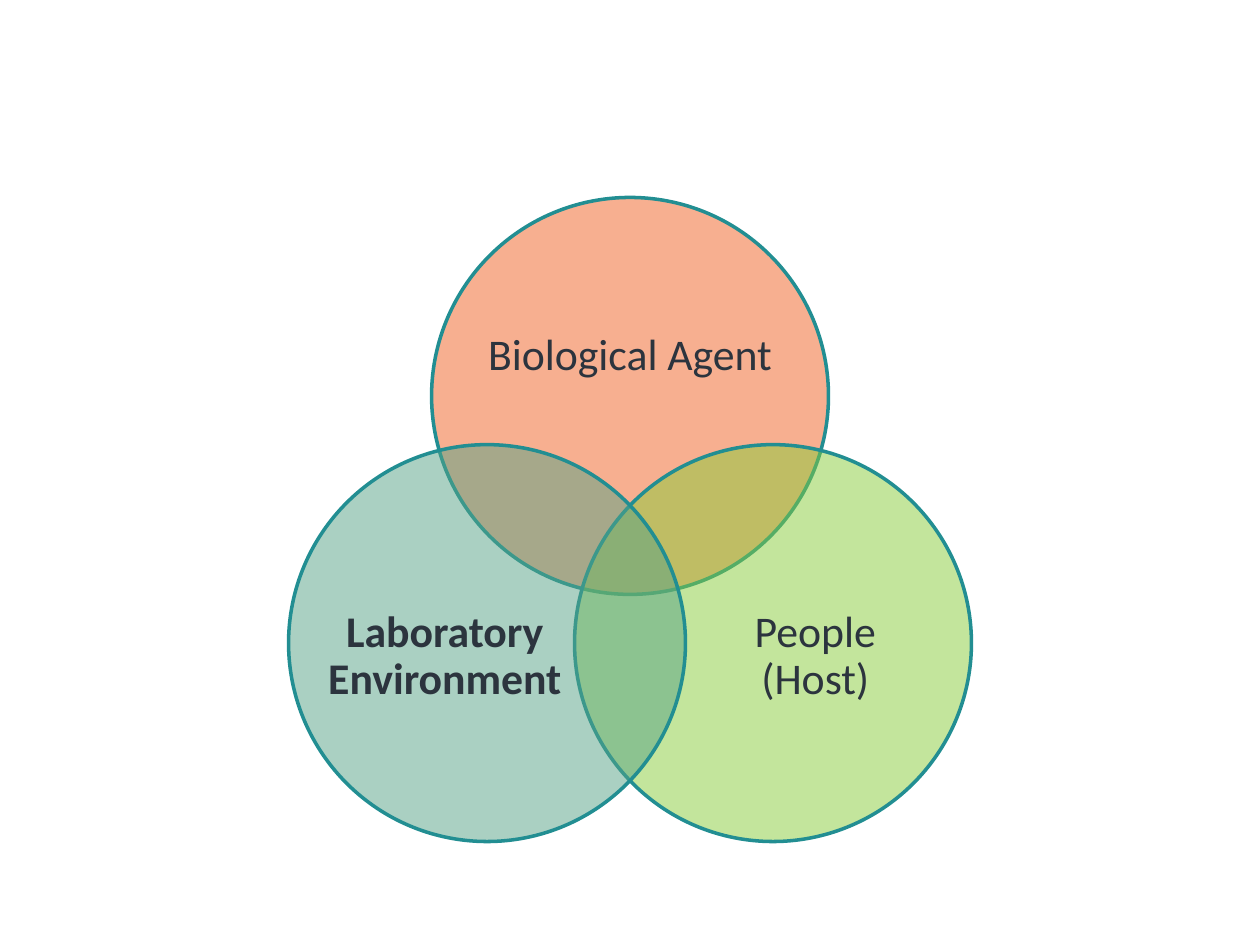
import pptx
import pptx.util
import pptx.dml.color
import pptx.enum.shapes
import pptx.enum.text
import pptx.oxml.ns
import lxml.etree

Inches, Pt = pptx.util.Inches, pptx.util.Pt
RGB = pptx.dml.color.RGBColor.from_string
HUES = {"agent": "F16122", "people": "88CC3A", "lab": "57A286",
        "edge": "228E92", "text": "2C343E"}

deck = pptx.Presentation()
deck.slide_width, deck.slide_height = Inches(10), Inches(7.5)
wide, high = deck.slide_width, deck.slide_height
slide = deck.slides.add_slide(deck.slide_layouts[6])

# Circle centres mirror about the slide's middle; all are shares of the slide.
SIZE = round(0.315 * wide)
MID, STEP = 0.5, 0.1135
TOP, LOW = 0.419, 0.6805

# key, circle centre, label, label centre, label size, bold
SETS = [
    ("agent", (MID, TOP), "Biological Agent", (MID, 0.377), (0.231, 0.19), False),
    ("people", (MID + STEP, LOW), "People (Host)", (0.647, 0.695), (0.189, 0.23), False),
    ("lab", (MID - STEP, LOW), "Laboratory Environment", (0.353, 0.695), (0.189, 0.23), True),
]
FRAME = {"word_wrap": True, "vertical_anchor": pptx.enum.text.MSO_ANCHOR.MIDDLE,
         "margin_left": Inches(0.02), "margin_right": Inches(0.02),
         "margin_top": 0, "margin_bottom": 0}
PARA = {"alignment": pptx.enum.text.PP_ALIGN.CENTER, "line_spacing": 0.9}
FONT = {"name": "Calibri", "size": Pt(25)}


def place(mid, w, h):
    """Return left, top, width and height of a box around a centre."""
    x, y = mid
    return round(x * wide - w / 2), round(y * high - h / 2), round(w), round(h)


def style(item, values):
    for name, value in values.items():
        setattr(item, name, value)


for key, spot, label, mid, (w, h), bold in SETS:
    disc = slide.shapes.add_shape(
        pptx.enum.shapes.MSO_SHAPE.OVAL, *place(spot, SIZE, SIZE))
    disc.shadow.inherit = False
    disc.fill.solid()
    disc.fill.fore_color.rgb = RGB(HUES[key])
    tint = disc.fill._xPr.find(".//" + pptx.oxml.ns.qn("a:srgbClr"))
    lxml.etree.SubElement(tint, pptx.oxml.ns.qn("a:alpha"), val="50000")
    disc.line.color.rgb = RGB(HUES["edge"])
    disc.line.width = Pt(2)

    frame = slide.shapes.add_textbox(*place(mid, w * wide, h * high)).text_frame
    style(frame, FRAME)
    para = frame.paragraphs[0]
    style(para, PARA)
    run = para.add_run()
    run.text = label
    style(run.font, FONT | {"bold": bold})
    run.font.color.rgb = RGB(HUES["text"])

deck.save("out.pptx")
